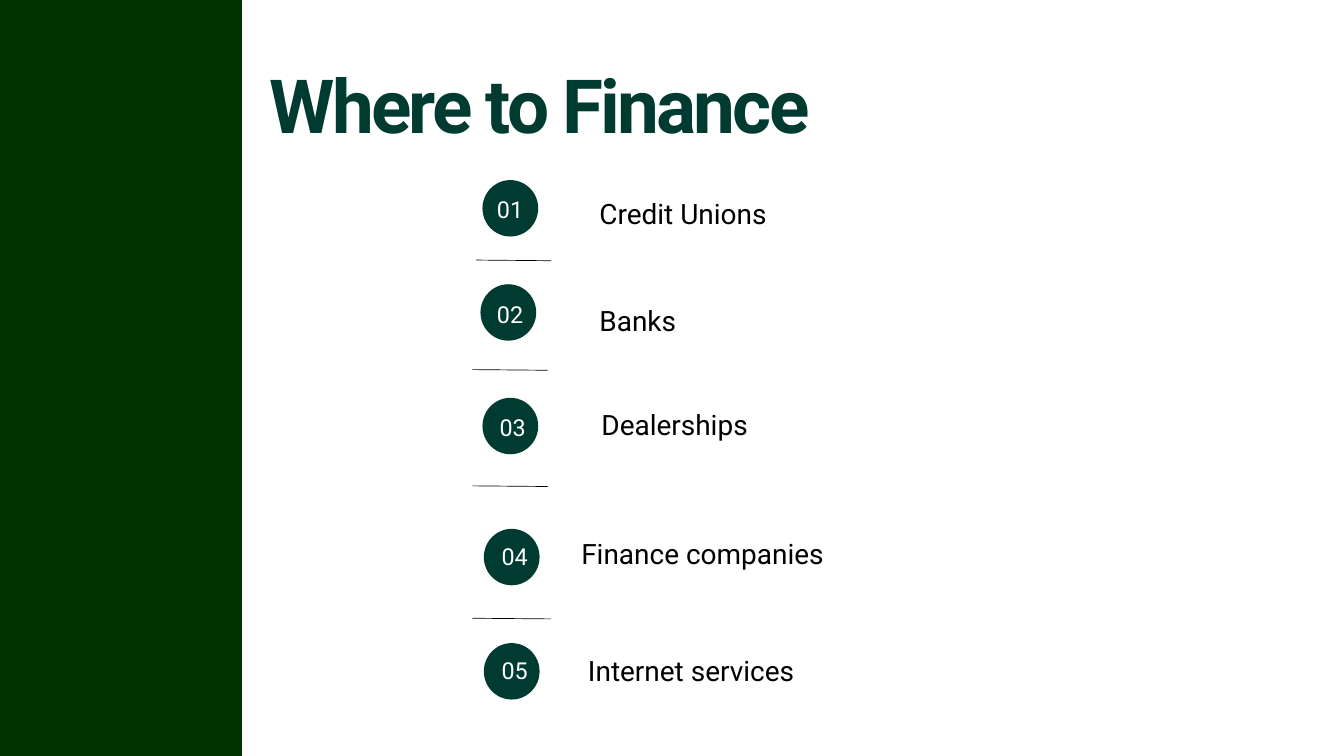
from pptx import Presentation
from pptx.dml.color import RGBColor
from pptx.enum.shapes import MSO_CONNECTOR, MSO_SHAPE
from pptx.enum.text import MSO_ANCHOR, PP_ALIGN
from pptx.oxml.ns import qn
from pptx.util import Inches, Pt
from lxml.etree import SubElement


def color(value):
    return RGBColor.from_string(value)


def write(frame, text, size=30, ink="000000", font="Roboto", bold=False,
          spacing=0, leading=35, align=PP_ALIGN.LEFT,
          anchor=MSO_ANCHOR.TOP, inset=0):
    frame.word_wrap = True
    frame.vertical_anchor = anchor
    frame.margin_left = frame.margin_right = Inches(inset)
    frame.margin_top = frame.margin_bottom = Inches(inset)
    paragraph = frame.paragraphs[0]
    paragraph.alignment = align
    paragraph.line_spacing = Pt(leading)
    run = paragraph.add_run()
    run.text = text
    run.font.name = font
    run.font.size = Pt(size)
    run.font.bold = bold
    run.font.color.rgb = color(ink)
    if spacing:
        run._r.get_or_add_rPr().set("spc", str(spacing * 100))


class SlideBuilder:
    SIDEBAR = "003300"
    ACCENT = "003B31"
    WHITE = "FFFFFF"
    BLACK = "000000"

    def __init__(self, slide):
        self.slide = slide
        slide.background.fill.solid()
        slide.background.fill.fore_color.rgb = color(self.WHITE)

    def shape(self, kind, left, top, width, height, fill):
        shape = self.slide.shapes.add_shape(
            kind, Inches(left), Inches(top), Inches(width), Inches(height))
        shape.shadow.inherit = False
        shape.fill.solid()
        shape.fill.fore_color.rgb = color(fill)
        shape.line.fill.background()

    def text(self, text, left, top, width, height, **style):
        box = self.slide.shapes.add_textbox(
            Inches(left), Inches(top), Inches(width), Inches(height))
        write(box.text_frame, text, **style)

    def badge(self, number, left, top, number_left, number_top):
        self.shape(MSO_SHAPE.OVAL, left, top, 0.83, 0.84, self.ACCENT)
        self.text(f"{number:02}", number_left, number_top, 0.68, 0.73,
                  size=25, ink=self.WHITE, align=PP_ALIGN.CENTER,
                  anchor=MSO_ANCHOR.MIDDLE, inset=0.06)

    def divider(self, left, right, top):
        line = self.slide.shapes.add_connector(
            MSO_CONNECTOR.STRAIGHT, Inches(left), Inches(top),
            Inches(right), Inches(top + 0.01))
        line.line.color.rgb = color(self.BLACK)
        line.line.width = Pt(0.75)
        SubElement(line._element.spPr, qn("a:effectLst"))


def main():
    deck = Presentation()
    deck.slide_width = Inches(20)
    deck.slide_height = Inches(11.25)
    builder = SlideBuilder(deck.slides.add_slide(deck.slide_layouts[6]))

    builder.shape(MSO_SHAPE.RECTANGLE, 0, 0, 3.6, 11.25, builder.SIDEBAR)
    builder.text("Where to Finance", 4.01, 0.41, 8.92, 2.29, size=80,
                 ink=builder.ACCENT, bold=True, spacing=-3, leading=130)

    lenders = [
        ("Credit Unions", (8.92, 2.94, 2.76), (7.18, 2.68, 7.25, 2.71)),
        ("Banks", (8.92, 4.53, 2.76), (7.15, 4.23, 7.25, 4.28)),
        ("Dealerships", (8.95, 6.08, 2.76), (7.18, 5.92, 7.29, 5.95)),
        ("Finance companies", (8.65, 8, 4.29), (7.2, 7.87, 7.32, 7.88)),
        ("Internet services", (8.75, 9.74, 3.57), (7.2, 9.57, 7.32, 9.58)),
    ]
    for number, (lender, label_place, badge_place) in enumerate(lenders, 1):
        builder.badge(number, *badge_place)
        builder.text(lender, *label_place, 0.49)

    dividers = [(7.08, 8.2, 3.87), (7.03, 8.15, 5.5),
                (7.03, 8.15, 7.23), (7.03, 8.2, 9.2)]
    for left, right, top in dividers:
        builder.divider(left, right, top)

    deck.save("out.pptx")


if __name__ == "__main__":
    main()
